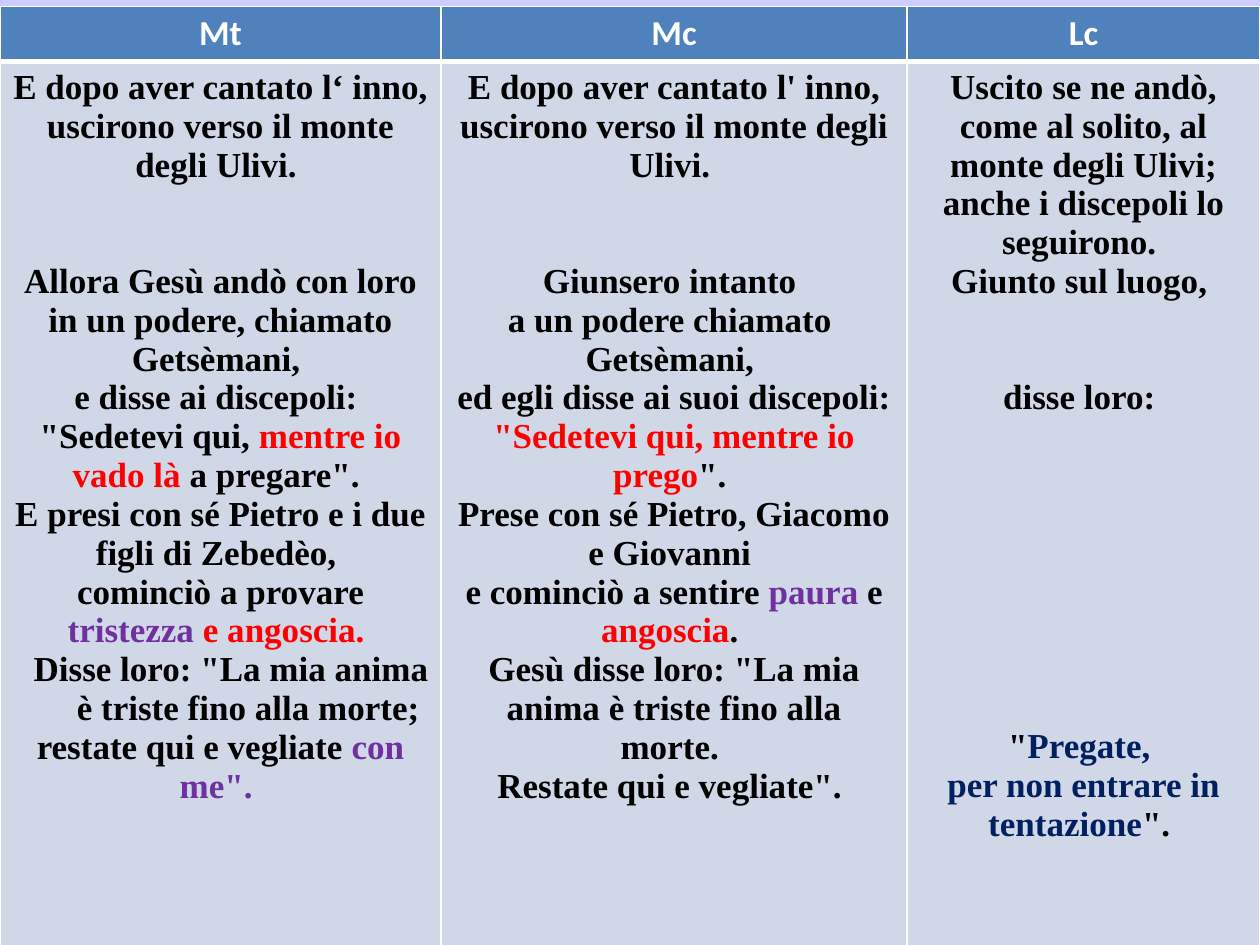
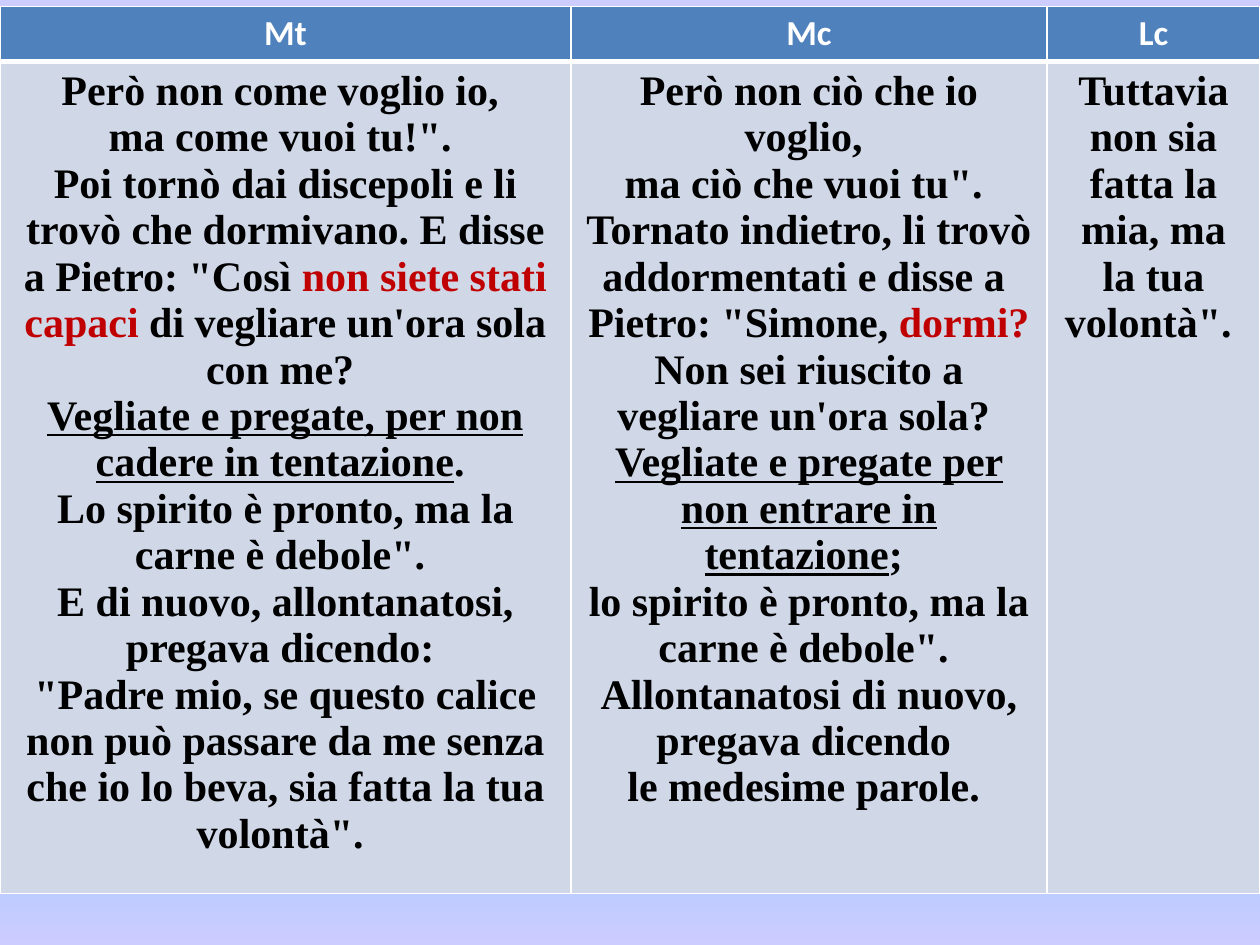
from lxml import etree
from pptx import Presentation
from pptx import util as u
from pptx.dml.color import RGBColor
from pptx.enum import text
from pptx.oxml.ns import qn

BLUE, PALE, WHITE, BLACK = "4F81BD", "D0D8E8", "FFFFFF", "000000"
RED, WINE, PLUM, NAVY = "FF0000", "C00000", "7030A0", "002060"
SKY = [(0, "CCCCFF"), (18, "99CCFF"), (36, "9966FF"),
       (61, "CC99FF"), (82, "99CCFF"), (100, "CCCCFF")]
HEADS = ["Mt", "Mc", "Lc"]
LINE = "line"
LEAD = 1.107
MID, RIGHT = text.PP_ALIGN.CENTER, text.PP_ALIGN.RIGHT


def hue(code):
    return RGBColor.from_string(code)


def para(*runs, gap=0, align=MID):
    return runs, gap, align


class Deck:
    """Holds the shared style and the current slide."""

    def __init__(self):
        self.prs = Presentation()
        self.prs.slide_width = u.Inches(10)
        self.prs.slide_height = u.Inches(7.5)
        self.slide = None
        self.sky()

    def sky(self):
        master = self.prs.slide_master
        fill = master.background.fill
        fill.gradient()
        fill.gradient_angle = 270
        stops = master.element.find(".//" + qn("a:gsLst"))
        for old in list(stops):
            stops.remove(old)
        for pos, code in SKY:
            stop = etree.SubElement(stops, qn("a:gs"), pos=str(pos * 1000))
            etree.SubElement(stop, qn("a:srgbClr"), val=code)

    def page(self):
        self.slide = self.prs.slides.add_slide(self.prs.slide_layouts[6])

    def edges(self, cell, top, base):
        props = cell._tc.get_or_add_tcPr()
        sides = [("L", 1), ("R", 1), ("T", top), ("B", base)]
        for spot, (side, width) in enumerate(sides):
            line = etree.Element(qn("a:ln" + side), w=str(u.Pt(width)))
            fill = etree.SubElement(line, qn("a:solidFill"))
            etree.SubElement(fill, qn("a:srgbClr"), val=WHITE)
            props.insert(spot, line)

    def cell(self, cell, paras, back, face, size, ink, top=1, base=1):
        cell.fill.solid()
        cell.fill.fore_color.rgb = hue(back)
        self.edges(cell, top, base)
        frame = cell.text_frame
        for spot, (runs, gap, align) in enumerate(paras):
            par = frame.add_paragraph() if spot else frame.paragraphs[0]
            par.alignment = align
            if gap:
                par.space_before = u.Pt(round(gap * size * LEAD, 2))
            font = par.font
            font.name, font.size, font.bold = face, u.Pt(size), True
            font.color.rgb = hue(ink)
            for item in runs:
                words, mark = (item, None) if isinstance(item, str) else item
                run = par.add_run()
                run.text = words
                if mark == LINE:
                    run.font.underline = True
                elif mark:
                    run.font.color.rgb = hue(mark)

    def table(self, widths, tall, size, columns):
        rows = [0.44, tall]
        grid = self.slide.shapes.add_table(
            2, len(widths), u.Inches(0), u.Inches(0.05),
            u.Inches(10), u.Inches(sum(rows))).table
        for row, height in zip(grid.rows, rows):
            row.height = u.Inches(height)
        for col, (width, head, paras) in enumerate(zip(widths, HEADS, columns)):
            grid.columns[col].width = u.Inches(width)
            self.cell(grid.cell(0, col), [para(head)], BLUE,
                      "Calibri", 20, WHITE, base=3)
            self.cell(grid.cell(1, col), paras, PALE,
                      "Times New Roman", size, BLACK, top=3)


def garden(deck):
    matthew = [
        para("E dopo aver cantato l‘ inno, uscirono verso il monte degli Ulivi. "),
        para("Allora Gesù andò con loro in un podere, chiamato Getsèmani, ", gap=2),
        para("e disse ai discepoli: "),
        para('"Sedetevi qui, ', ("mentre io vado là ", RED), 'a pregare". '),
        para("E presi con sé Pietro e i due figli di Zebedèo, "),
        para("cominciò a provare ", ("tristezza ", PLUM), ("e angoscia. ", RED)),
        para('Disse loro: "La mia anima è triste fino alla morte; ', align=RIGHT),
        para("restate qui e vegliate ", ('con me". ', PLUM)),
    ]
    mark = [
        para("E dopo aver cantato l' inno, uscirono verso il monte degli Ulivi. "),
        para("Giunsero intanto ", gap=2),
        para("a un podere chiamato "),
        para("Getsèmani, "),
        para("ed egli disse ai suoi discepoli: ",
             ('"Sedetevi qui, mentre io prego', RED), '". '),
        para("Prese con sé Pietro, Giacomo e Giovanni "),
        para("e cominciò a sentire ", ("paura ", PLUM), "e ",
             ("angoscia", RED), ". "),
        para('Gesù disse loro: "La mia anima è triste fino alla morte. '),
        para('Restate qui e vegliate". '),
    ]
    luke = [
        para("Uscito se ne andò, come al solito, al monte degli Ulivi; "
             "anche i discepoli lo seguirono. "),
        para("Giunto sul luogo, "),
        para("disse loro: ", gap=2),
        para('"', ("Pregate, ", NAVY), gap=8),
        para(("per non entrare in tentazione", NAVY), '". '),
    ]
    deck.page()
    deck.table([3.5, 3.7, 2.8], 7.43, 20, [matthew, mark, luke])


def prayer(deck):
    matthew = [
        para("Però non come voglio io, "),
        para('ma come vuoi tu!". '),
        para("Poi tornò dai discepoli e li trovò che dormivano. "
             'E disse a Pietro: "Così ', ("non siete stati capaci", WINE),
             " di vegliare un'ora sola con me? "),
        para(("Vegliate e pregate, per non cadere in tentazione", LINE), ". "),
        para('Lo spirito è pronto, ma la carne è debole". '),
        para("E di nuovo, allontanatosi, pregava dicendo: "),
        para('"Padre mio, se questo calice non può passare da me '
             'senza che io lo beva, sia fatta la tua volontà". '),
    ]
    mark = [
        para("Però non ciò che io voglio, "),
        para('ma ciò che vuoi tu". '),
        para("Tornato indietro, li trovò addormentati e disse a "),
        para('Pietro: "Simone, ', ("dormi?", WINE),
             " Non sei riuscito a vegliare un'ora sola? "),
        para(("Vegliate e pregate per non entrare in tentazione", LINE), "; "),
        para('lo spirito è pronto, ma la carne è debole". '),
        para("Allontanatosi di nuovo, pregava dicendo "),
        para("le medesime parole. "),
    ]
    luke = [para('Tuttavia non sia fatta la mia, ma la tua volontà". ')]
    deck.page()
    deck.table([4.53, 3.78, 1.69], 6.6, 24, [matthew, mark, luke])


def main():
    deck = Deck()
    garden(deck)
    prayer(deck)
    deck.prs.save("out.pptx")


if __name__ == "__main__":
    main()
